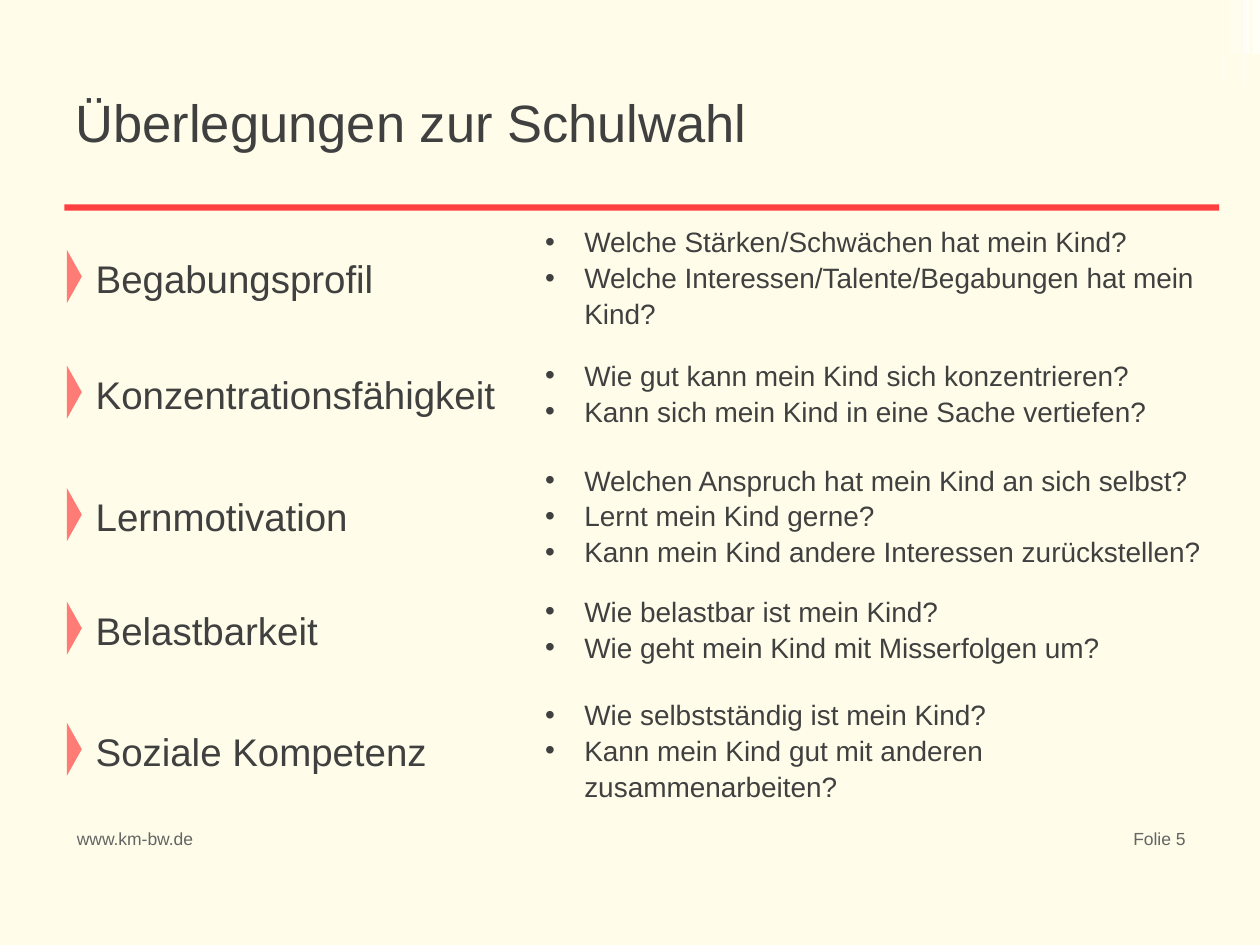
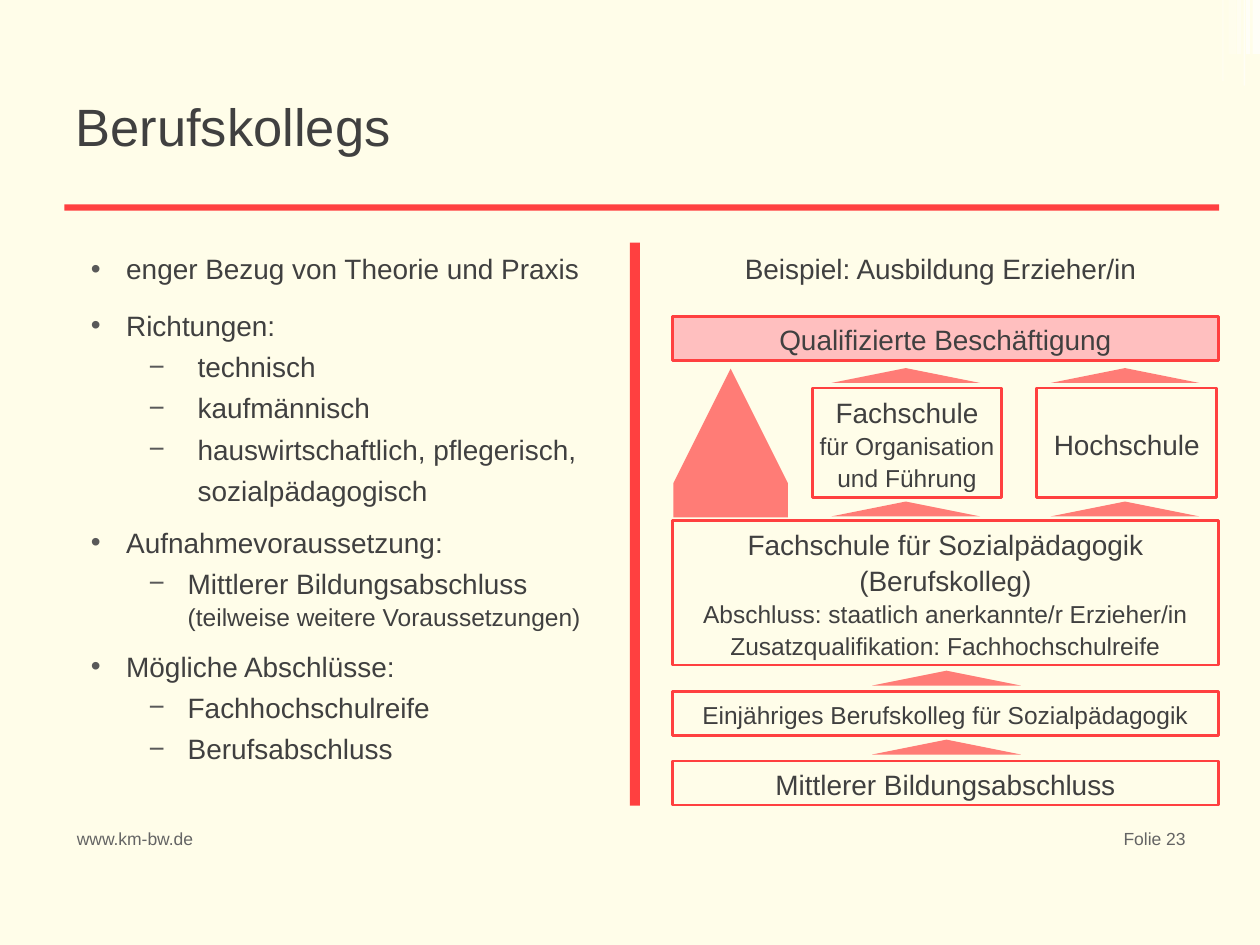
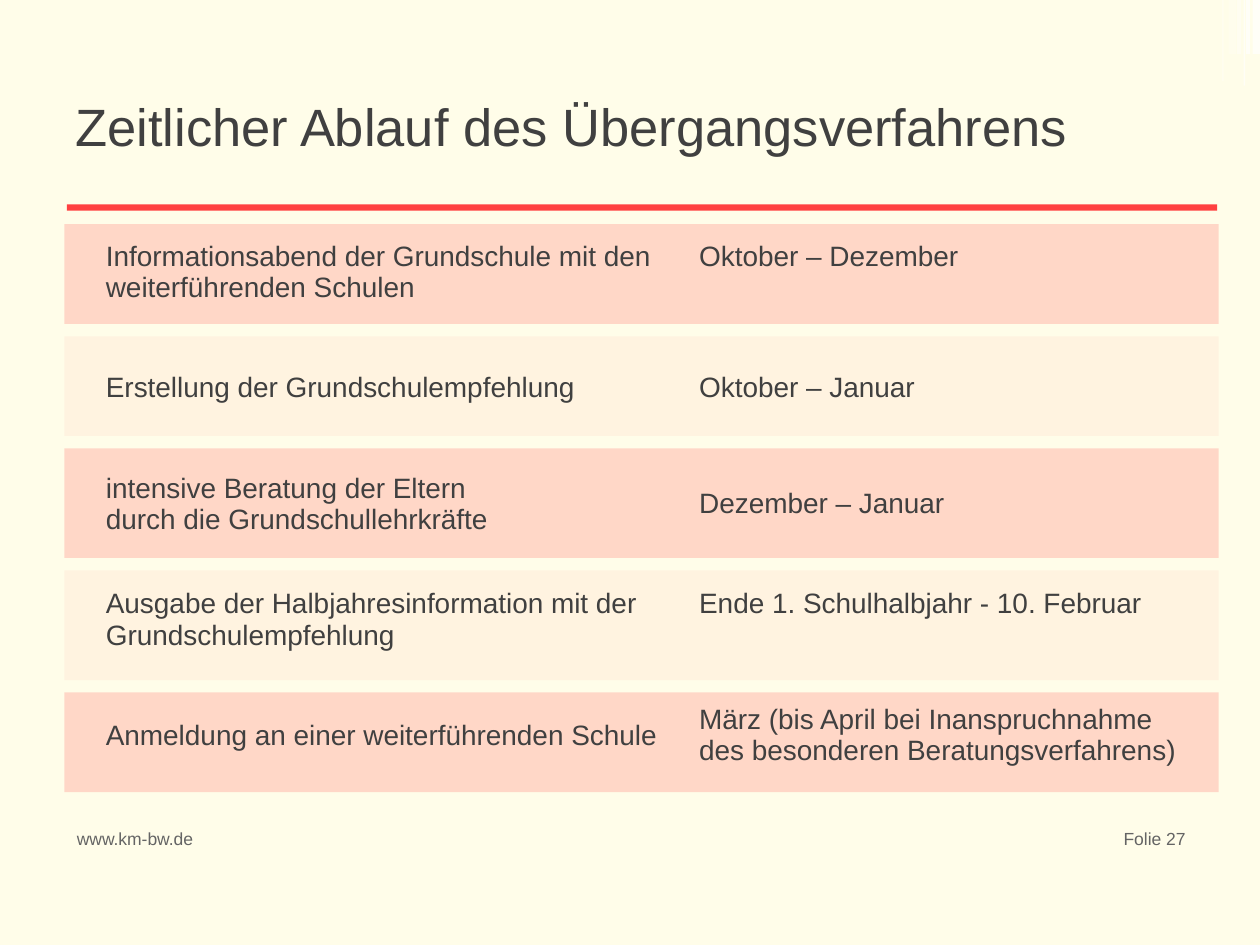
from itertools import cycle
from typing import NamedTuple

from lxml.etree import SubElement
from pptx import Presentation
from pptx.dml.color import RGBColor
from pptx.enum.shapes import MSO_SHAPE as Preset
from pptx.enum.text import MSO_ANCHOR as Anchor, MSO_AUTO_SIZE as AutoSize, PP_ALIGN as Align
from pptx.oxml.ns import qn
from pptx.util import Cm, Pt

FONT = "Arial"
CREAM, RED, PINK, ROSE, WHITE = "FFFDE9", "FF4040", "FFBFBF", "FF7F7F", "FFFFFF"
INK, GREY, BULLET_GREY = "404040", "646464", "595959"
ARROW_ALPHA = 68
LINE_SPACING = 1.07
TITLE_ONLY, TITLE_AND_BODY = 5, 1
NO_GRID_STYLE = "{2D5ABB26-0587-4C30-8999-92F81FD0307C}"


class Area(NamedTuple):
    """A rectangle in centimetres."""
    left: float
    top: float
    width: float
    height: float

    def lengths(self):
        return [Cm(value) for value in self]


class Stripe(NamedTuple):
    left: float
    width: float
    height: float
    alpha: int


class Topic(NamedTuple):
    top: float
    label: str
    label_width: float
    questions: list[str]
    question_width: float


class Line(NamedTuple):
    text: str
    size: int = 16


class Station(NamedTuple):
    """A box of the training path."""
    area: Area
    lines: list[Line]
    fill: str = ""
    side_inset: float = 0.25


class Arrow(NamedTuple):
    centre_x: float
    centre_y: float
    length: float = 0.3
    breadth: float = 3.0


class Item(NamedTuple):
    text: str
    level: int = 0
    bullet: str = "•"
    left: float = 1.02
    hanging: float = 0.71
    before: int = 3
    after: int = 0
    remark: str = ""


class Step(NamedTuple):
    task: str
    period: str
    height: float
    period_on_top: bool = False


STRIPES = [
    Stripe(25.12, 0.08, 1.09, 65),
    Stripe(25.25, 0.15, 1.09, 65),
    Stripe(24.64, 0.03, 1.63, 30),
    Stripe(25.07, 0.03, 1.73, 60),
    Stripe(24.77, 0.15, 1.09, 20),
    Stripe(24.94, 0.08, 1.09, 40),
]

TOPICS = [
    Topic(4.57, "Begabungsprofil", 6.43,
          ["Welche Stärken/Schwächen hat mein Kind?",
           "Welche Interessen/Talente/Begabungen hat mein Kind?"], 13.82),
    Topic(6.9, "Konzentrationsfähigkeit", 8.76,
          ["Wie gut kann mein Kind sich konzentrieren?",
           "Kann sich mein Kind in eine Sache vertiefen?"], 13.82),
    Topic(9.37, "Lernmotivation", 6.48,
          ["Welchen Anspruch hat mein Kind an sich selbst?",
           "Lernt mein Kind gerne?",
           "Kann mein Kind andere Interessen zurückstellen?"], 14.3),
    Topic(11.66, "Belastbarkeit", 6.4,
          ["Wie belastbar ist mein Kind?",
           "Wie geht mein Kind mit Misserfolgen um?"], 13.84),
    Topic(14.1, "Soziale Kompetenz", 8.41,
          ["Wie selbstständig ist mein Kind?",
           "Kann mein Kind gut mit anderen\vzusammenarbeiten?"], 14.66),
]
TOPIC_HEIGHT, MARKER_HEIGHT = 2.01, 1.07

DASH = {"level": 1, "bullet": "−", "left": 2.26, "hanging": 0.79}
WIDE_DASH = DASH | {"left": 2.46, "hanging": 0.99}
ITEMS = [
    Item("enger Bezug von Theorie und Praxis", before=0, after=9),
    Item("Richtungen:"),
    Item("technisch", **WIDE_DASH),
    Item("kaufmännisch", **WIDE_DASH),
    Item("hauswirtschaftlich, pflegerisch,", **WIDE_DASH),
    Item("sozialpädagogisch", **WIDE_DASH | {"bullet": "", "hanging": 0}),
    Item("Aufnahmevoraussetzung:", before=9),
    Item("Mittlerer Bildungsabschluss", remark="(teilweise weitere Voraussetzungen)", **DASH),
    Item("Mögliche Abschlüsse:", before=9),
    Item("Fachhochschulreife", **DASH),
    Item("Berufsabschluss", **DASH),
]

PATH_LEFT, PATH_WIDTH, BAR_HEIGHT = 13.56, 11, 0.89
STATIONS = [
    Station(Area(PATH_LEFT, 6.38, PATH_WIDTH, BAR_HEIGHT),
            [Line("Qualifizierte Beschäftigung")], PINK),
    Station(Area(16.38, 7.82, 3.81, 2.21),
            [Line("Fachschule"), Line("für Organisation und Führung", 14)], side_inset=0.1),
    Station(Area(20.9, 7.82, 3.63, 2.21), [Line("Hochschule")], side_inset=0.1),
    Station(Area(PATH_LEFT, 10.49, PATH_WIDTH, 2.92),
            [Line("Fachschule für Sozialpädagogik (Berufskolleg)"),
             Line("Abschluss: staatlich anerkannte/r Erzieher/in", 14),
             Line("Zusatzqualifikation: Fachhochschulreife", 14)]),
    Station(Area(PATH_LEFT, 13.94, PATH_WIDTH, BAR_HEIGHT),
            [Line("Einjähriges Berufskolleg für Sozialpädagogik", 14)]),
    Station(Area(PATH_LEFT, 15.34, PATH_WIDTH, BAR_HEIGHT), [Line("Mittlerer Bildungsabschluss")]),
]
ARROWS = [
    Arrow(19.08, 15.06),
    Arrow(19.08, 13.67),
    *(Arrow(x, y) for y in (10.26, 7.57) for x in (18.26, 22.68)),
    Arrow(14.73, 8.93, 3.0, 2.31),
]

STEPS = [
    Step("Informationsabend der Grundschule mit den weiterführenden Schulen",
         "Oktober – Dezember", 2.01, True),
    Step("Erstellung der Grundschulempfehlung", "Oktober – Januar", 2.01),
    Step("intensive Beratung der Eltern\ndurch die Grundschullehrkräfte",
         "Dezember – Januar", 2.21),
    Step("Ausgabe der Halbjahresinformation mit der Grundschulempfehlung",
         "Ende 1. Schulhalbjahr - 10. Februar", 2.21, True),
    Step("Anmeldung an einer weiterführenden Schule",
         "März (bis April bei Inanspruchnahme des besonderen Beratungsverfahrens)", 2.01),
]
BAND_TOP, BAND_GAP = 4.52, 0.25
TABLE_AREA = Area(1.88, 4.32, 22.2, 11.68)
COLUMN_WIDTHS = (11.96, 10.24)


def rgb(colour: str) -> RGBColor:
    return RGBColor.from_string(colour)


def place(shape, area: Area) -> None:
    shape.left, shape.top, shape.width, shape.height = area.lengths()


def style(para, size: int, colour: str = INK, align=Align.LEFT,
          spacing: float = LINE_SPACING, before: int = 0, after: int = 0) -> None:
    para.alignment = align
    para.line_spacing = spacing
    para.space_before, para.space_after = Pt(before), Pt(after)
    font = para.font
    font.name, font.size, font.bold = FONT, Pt(size), False
    font.color.rgb = rgb(colour)


def set_bullet(para, char: str, left: float, hanging: float, colour: str = INK) -> None:
    """Indent the paragraph; an empty char means no bullet."""
    props = para._p.get_or_add_pPr()
    props.set("marL", str(Cm(left)))
    props.set("indent", str(-Cm(hanging)))
    if char:
        bullet_colour = SubElement(props, qn("a:buClr"))
        SubElement(bullet_colour, qn("a:srgbClr")).set("val", colour)
        SubElement(props, qn("a:buFont")).set("typeface", FONT)
        SubElement(props, qn("a:buChar")).set("char", char)
    else:
        SubElement(props, qn("a:buNone"))


def next_para(frame, index: int):
    return frame.add_paragraph() if index else frame.paragraphs[0]


def add_preset(page, area: Area, fill: str = "", preset=Preset.RECTANGLE,
               alpha: int = 100, line: str = ""):
    shape = page.shapes.add_shape(preset, *area.lengths())
    shape.shadow.inherit = False
    if fill:
        shape.fill.solid()
        shape.fill.fore_color.rgb = rgb(fill)
        if alpha < 100:
            colour = shape._element.spPr.find(".//" + qn("a:srgbClr"))
            SubElement(colour, qn("a:alpha")).set("val", str(alpha * 1000))
    else:
        shape.fill.background()
    if line:
        shape.line.color.rgb = rgb(line)
        shape.line.width = Pt(1.5)
    else:
        shape.line.fill.background()
    shape.text_frame.word_wrap = True
    shape.text_frame.vertical_anchor = Anchor.MIDDLE
    return shape


def add_pointer(page, area: Area, rotation: int = 0) -> None:
    pointer = add_preset(page, area, RED, Preset.PENTAGON, ARROW_ALPHA)
    pointer.adjustments[0] = 1
    pointer.rotation = rotation


def add_text(page, area: Area, text: str, size: int, colour: str = INK, align=Align.LEFT):
    box = page.shapes.add_textbox(*area.lengths())
    box.text_frame.word_wrap = True
    para = box.text_frame.paragraphs[0]
    para.text = text
    style(para, size, colour, align)
    return para


def add_page(deck, layout: int, title: str, number: int,
             title_spacing: float = 1.0, rule_left: float = 1.3, rule_width: float = 23.28):
    """Add a page with title, rule, corner stripes and footer."""
    page = deck.slides.add_slide(deck.slide_layouts[layout])
    for stripe in STRIPES:
        add_preset(page, Area(stripe.left, 0, stripe.width, stripe.height),
                   WHITE, alpha=stripe.alpha)
    heading = page.shapes.title
    place(heading, Area(1.27, 1.55, 22.86, 1.96))
    frame = heading.text_frame
    frame.text = title
    frame.auto_size = AutoSize.NONE
    frame.vertical_anchor = Anchor.MIDDLE
    style(frame.paragraphs[0], 30, spacing=title_spacing)
    add_preset(page, Area(rule_left, 4.12, rule_width, 0.13), RED)
    add_text(page, Area(1.3, 16.54, 3.38, 0.99), "www.km-bw.de", 10, GREY)
    add_text(page, Area(21.69, 16.54, 2.46, 0.99), f"Folie {number}", 10, GREY, Align.RIGHT)
    return page


def add_topic(page, topic: Topic) -> None:
    label = add_preset(page, Area(1.68, topic.top, topic.label_width, TOPIC_HEIGHT))
    para = label.text_frame.paragraphs[0]
    para.text = topic.label
    style(para, 22)

    area = Area(10.74, topic.top, topic.question_width, TOPIC_HEIGHT)
    frame = add_preset(page, area, CREAM).text_frame
    for index, question in enumerate(topic.questions):
        para = next_para(frame, index)
        para.text = question
        set_bullet(para, "•", 0.79, 0.79)
        style(para, 16)

    marker_top = topic.top + (TOPIC_HEIGHT - MARKER_HEIGHT) / 2
    add_pointer(page, Area(1.35, marker_top, 0.3, MARKER_HEIGHT))


def fill_list(body) -> None:
    place(body, Area(1.27, 4.9, 11.66, 11.35))
    frame = body.text_frame
    frame.auto_size = AutoSize.NONE
    for index, item in enumerate(ITEMS):
        para = next_para(frame, index)
        para.level = item.level
        para.text = item.text
        if item.remark:
            para.add_line_break()
            span = para.add_run()
            span.text = item.remark
            span.font.size = Pt(14)
        set_bullet(para, item.bullet, item.left, item.hanging, BULLET_GREY)
        style(para, 16, before=item.before, after=item.after)


def add_station(page, station: Station) -> None:
    frame = add_preset(page, station.area, station.fill, line=RED).text_frame
    frame.margin_left = frame.margin_right = Cm(station.side_inset)
    for index, line in enumerate(station.lines):
        para = next_para(frame, index)
        para.text = line.text
        style(para, line.size, align=Align.CENTER)


def add_up_arrow(page, arrow: Arrow) -> None:
    area = Area(arrow.centre_x - arrow.length / 2, arrow.centre_y - arrow.breadth / 2,
                arrow.length, arrow.breadth)
    add_pointer(page, area, 270)


def add_bands(page) -> None:
    top = BAND_TOP
    for step, (fill, alpha) in zip(STEPS, cycle([(RED, 20), (ROSE, 8)])):
        add_preset(page, Area(1.3, top, 23.27, step.height), fill, alpha=alpha)
        top += step.height + BAND_GAP


def add_schedule(page) -> None:
    table = page.shapes.add_table(len(STEPS), 2, *TABLE_AREA.lengths()).table
    table.first_row = table.horz_banding = False
    table._tbl.tblPr.find(qn("a:tableStyleId")).text = NO_GRID_STYLE
    for column, width in zip(table.columns, COLUMN_WIDTHS):
        column.width = Cm(width)
    for row, step in zip(table.rows, STEPS):
        for cell, text in zip(row.cells, (step.task, step.period)):
            cell.text = text
            cell.fill.background()
            cell.vertical_anchor = Anchor.MIDDLE
            for para in cell.text_frame.paragraphs:
                style(para, 16, spacing=1.0)
        if step.period_on_top:
            row.cells[1].vertical_anchor = Anchor.TOP
            row.cells[1].margin_top = Cm(0.54)


def build_school_choice(deck) -> None:
    page = add_page(deck, TITLE_ONLY, "Überlegungen zur Schulwahl", 5, title_spacing=0.9)
    for topic in TOPICS:
        add_topic(page, topic)


def build_vocational_college(deck) -> None:
    page = add_page(deck, TITLE_AND_BODY, "Berufskollegs", 23)
    fill_list(page.placeholders[1])
    caption = add_text(page, Area(12.93, 4.9, 11.76, 11.2),
                       "Beispiel: Ausbildung Erzieher/in", 16, align=Align.CENTER)
    caption._p.get_or_add_pPr().set("marL", str(Cm(0.3)))
    add_preset(page, Area(12.7, 4.89, 0.2, 11.35), RED)
    for station in STATIONS:
        add_station(page, station)
    for arrow in ARROWS:
        add_up_arrow(page, arrow)


def build_timeline(deck) -> None:
    page = add_page(deck, TITLE_ONLY, "Zeitlicher Ablauf des Übergangsverfahrens", 27,
                    rule_left=1.35, rule_width=23.19)
    add_bands(page)
    add_schedule(page)


def main() -> None:
    deck = Presentation()
    deck.slide_width, deck.slide_height = Cm(25.4), Cm(19.05)
    background = deck.slide_master.background.fill
    background.solid()
    background.fore_color.rgb = rgb(CREAM)
    build_school_choice(deck)
    build_vocational_college(deck)
    build_timeline(deck)
    deck.save("out.pptx")


if __name__ == "__main__":
    main()
